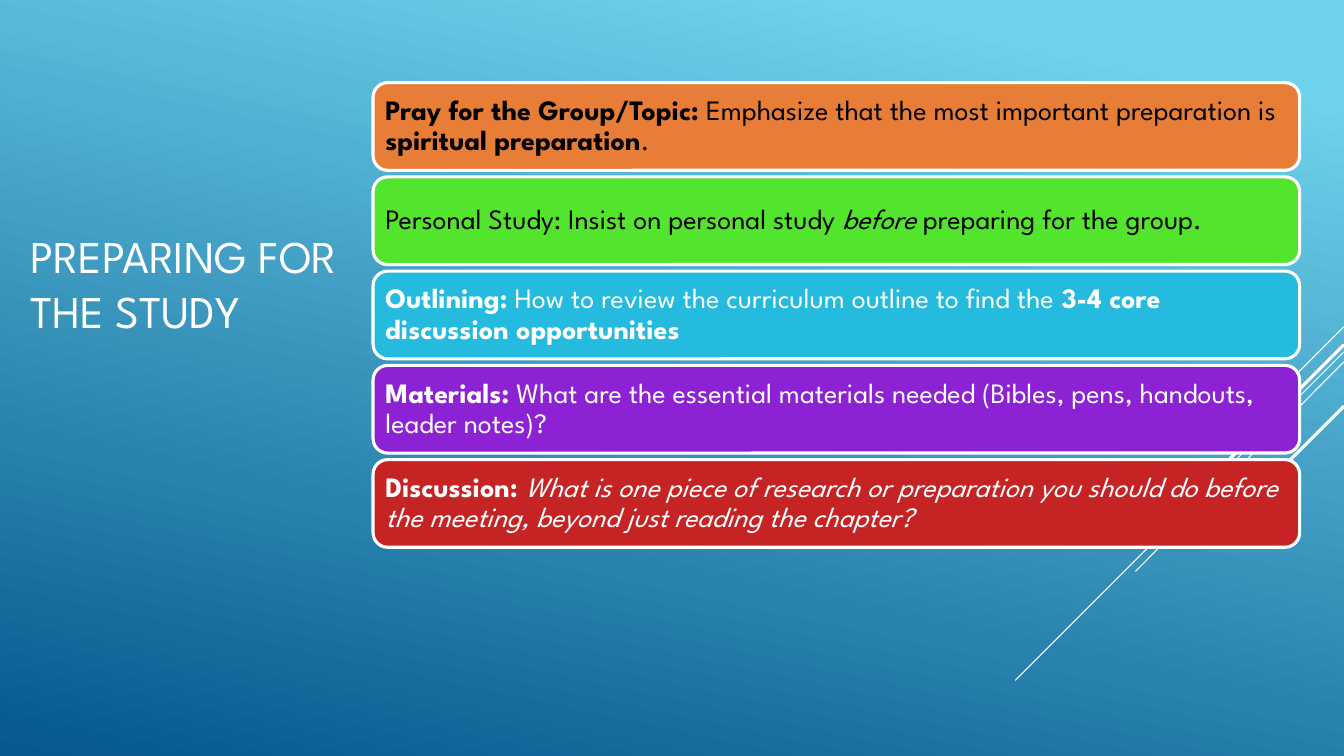
import pptx
import pptx.util
import pptx.dml.color
import pptx.enum.shapes
import pptx.enum.text
import pptx.oxml.ns
from lxml import etree
from pptx.util import Inches, Pt

FONT = "League Spartan"
WHITE, BLACK = "FFFFFF", "000000"


def color(hex_value):
    return pptx.dml.color.RGBColor.from_string(hex_value)


presentation = pptx.Presentation()
presentation.slide_width = Inches(13.33)
presentation.slide_height = Inches(7.5)
slide = presentation.slides.add_slide(presentation.slide_layouts[6])

# Background gradient
backdrop = slide.background.fill
backdrop.gradient()
backdrop.gradient_angle = 360 - 102
for stop, (position, shade) in zip(backdrop.gradient_stops, [(0.1, "6ED2EB"), (1, "06588E")]):
    stop.position = position
    stop.color.rgb = color(shade)

# Diagonal rays from the right edge: start y, end x, end y, weight
rays = [
    (3.24, 12.33, 4.24, 0.75),
    (3.49, 10.07, 6.75, 0.75),
    (3.59, 11.26, 5.67, 0.75),
    (3.42, 11.42, 5.33, 2.25),
    (4.03, 11.94, 5.42, 2.25),
]
for start_y, end_x, end_y, weight in rays:
    ray = slide.shapes.add_connector(
        pptx.enum.shapes.MSO_CONNECTOR.STRAIGHT,
        Inches(13.33), Inches(start_y), Inches(end_x), Inches(end_y))
    ray.line.color.rgb = color(WHITE)
    ray.line.width = Pt(weight)
    etree.SubElement(ray._element.spPr, pptx.oxml.ns.qn("a:effectLst"))

# Title
title = slide.shapes.add_textbox(Inches(0.2), Inches(1.98), Inches(3.42), Inches(1.65)).text_frame
title.word_wrap = True
title.vertical_anchor = pptx.enum.text.MSO_ANCHOR.MIDDLE
heading = title.paragraphs[0]
heading.text = "PREPARING FOR THE STUDY"
heading.font.name = FONT
heading.font.size = Pt(32.4)
heading.font.color.rgb = color(WHITE)

# Preparation steps: fill, text colour, runs with style (b bold, i italic)
steps = [
    ("E87D37", BLACK, [
        ("Pray for the Group/Topic:", "b"),
        (" Emphasize that the most important preparation is ", ""),
        ("spiritual preparation", "b"),
        (".", "")]),
    ("53E42E", BLACK, [
        ("Personal Study: Insist on personal study ", ""),
        ("before", "i"),
        (" preparing for the group.", "")]),
    ("25BBDF", WHITE, [
        ("Outlining:", "b"),
        (" How to review the curriculum outline to find the ", ""),
        ("3-4 core discussion opportunities", "b")]),
    ("8C22D4", WHITE, [
        ("Materials:", "b"),
        (" What are the essential materials needed (Bibles, pens, handouts, leader notes)?", "")]),
    ("C62324", WHITE, [
        ("Discussion: ", "b"),
        ("What is one piece of research or preparation you should do before the meeting, "
         "beyond just reading the chapter?", "i")]),
]
STEP_TOP, STEP_PITCH = 0.82, 0.935
for index, (fill, text_color, phrases) in enumerate(steps):
    step = slide.shapes.add_shape(
        pptx.enum.shapes.MSO_SHAPE.ROUNDED_RECTANGLE,
        Inches(3.7), Inches(STEP_TOP + index * STEP_PITCH), Inches(9.19), Inches(0.87))
    step.shadow.inherit = False
    step.fill.solid()
    step.fill.fore_color.rgb = color(fill)
    step.line.color.rgb = color(WHITE)
    step.line.width = Pt(2.25)

    frame = step.text_frame
    frame.word_wrap = True
    frame.vertical_anchor = pptx.enum.text.MSO_ANCHOR.MIDDLE
    frame.margin_left = frame.margin_right = Inches(0.08)
    frame.margin_top = frame.margin_bottom = Inches(0.08)
    sentence = frame.paragraphs[0]
    sentence.alignment = pptx.enum.text.PP_ALIGN.LEFT
    sentence.line_spacing = 0.9
    sentence.font.name = FONT
    sentence.font.size = Pt(20)
    sentence.font.color.rgb = color(text_color)
    for words, style in phrases:
        phrase = sentence.add_run()
        phrase.text = words
        if style == "b":
            phrase.font.bold = True
        elif style == "i":
            phrase.font.italic = True

presentation.save("out.pptx")
